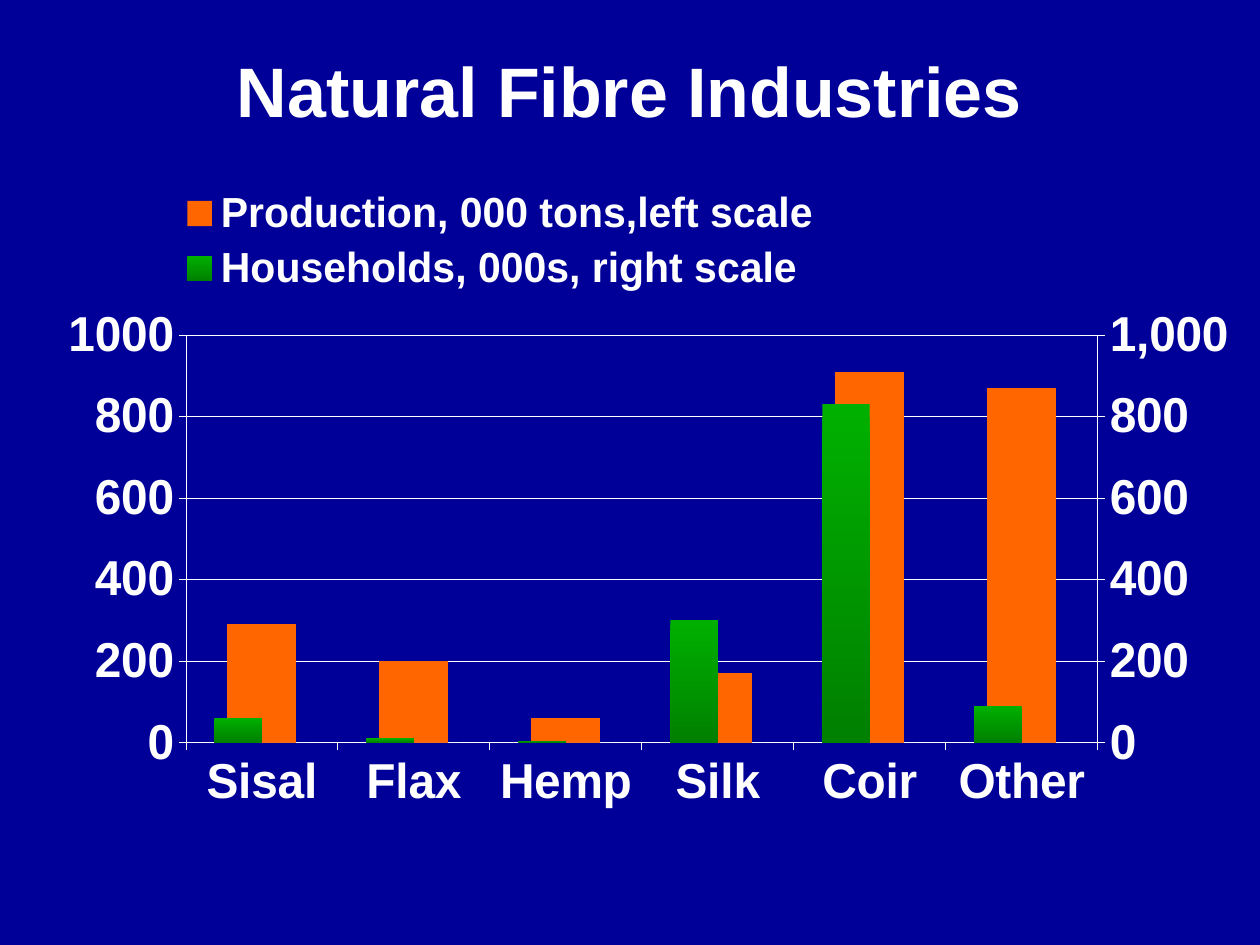
import copy

import pptx
import pptx.chart.data
import pptx.dml.color
import pptx.enum.chart
import pptx.enum.text
import pptx.oxml
import pptx.oxml.ns
import pptx.util

Inches = pptx.util.Inches
qn = pptx.oxml.ns.qn
WHITE = "FFFFFF"
CATEGORIES = ["Sisal", "Flax", "Hemp", "Silk", "Coir", "Other"]
SERIES = {
    "Production, 000 tons,left scale": [290, 200, 60, 170, 910, 870],
    "Households, 000s, right scale": [60, 10, 5, 300, 830, 90],
    "Series 3": [0] * 6,
}


def rgb(value):
    """Return the colour for a hex string."""
    return pptx.dml.color.RGBColor.from_string(value)


def set_font(font, size, bold=True, color=WHITE, name="Arial"):
    """Format a font."""
    font.size, font.bold, font.name = pptx.util.Pt(size), bold, name
    font.color.rgb = rgb(color)


def write_text(tf, text, size=18, align=pptx.enum.text.PP_ALIGN.CENTER, **fmt):
    """Write one formatted paragraph in a text frame."""
    p = tf.paragraphs[0]
    p.alignment = align
    r = p.add_run()
    r.text = text
    set_font(r.font, size, **fmt)


def add_title(s, text):
    """Place and fill the title placeholder."""
    sp = s.shapes.title
    sp.left, sp.top, sp.width, sp.height = map(Inches, (0.33, 0.25, 9.33, 0.92))
    sp.text_frame.vertical_anchor = pptx.enum.text.MSO_ANCHOR.MIDDLE
    write_text(sp.text_frame, text, size=40)


def chart_xml(tag, body):
    """Parse one chart element with the given content."""
    uri = pptx.oxml.ns.nsuri("c")
    return pptx.oxml.parse_xml(f'<c:{tag} xmlns:c="{uri}">{body}</c:{tag}>')


def layout_xml(x, y, w, h, inner=False):
    """Return a manual layout in fractions of the chart."""
    body = '<c:layoutTarget val="inner"/>' if inner else ""
    body += '<c:xMode val="edge"/><c:yMode val="edge"/>'
    body += "".join(f'<c:{k} val="{v}"/>' for k, v in zip("xywh", (x, y, w, h)))
    return chart_xml("layout", f"<c:manualLayout>{body}</c:manualLayout>")


def format_axis(axis):
    """Give an axis white lines, outside ticks and large labels."""
    axis.format.line.color.rgb = rgb(WHITE)
    axis.format.line.width = pptx.util.Pt(0.5)
    axis.major_tick_mark = pptx.enum.chart.XL_TICK_MARK.OUTSIDE
    axis.minor_tick_mark = pptx.enum.chart.XL_TICK_MARK.NONE
    set_font(axis.tick_labels.font, 28)


def format_value_axis(axis):
    """Set the scale, labels and gridlines of the value axis."""
    format_axis(axis)
    axis.minimum_scale, axis.maximum_scale, axis.major_unit = 0, 1000, 200
    axis.has_major_gridlines = True
    axis.major_gridlines.format.line.color.rgb = rgb(WHITE)
    axis.major_gridlines.format.line.width = pptx.util.Pt(0.5)
    axis.tick_labels.number_format = "0"
    axis.tick_labels.number_format_is_linked = False


def format_series(plot):
    """Colour the three series."""
    production, households, third = plot.series
    for ser, color in ((production, "FF6600"), (third, "AAAACA")):
        ser.format.fill.solid()
        ser.format.fill.fore_color.rgb = rgb(color)
    fill = households.format.fill
    fill.gradient()
    fill.gradient_angle = 270
    for stop, color in zip(fill.gradient_stops, ("00B000", "008000")):
        stop.color.rgb = rgb(color)


def add_right_axis(chart):
    """Move all series but the first to a second pair of axes."""
    area = chart.element.find(".//" + qn("c:plotArea"))
    left = area.find(qn("c:barChart"))
    right = copy.deepcopy(left)
    for ser in left.findall(qn("c:ser"))[1:]:
        left.remove(ser)
    right.remove(right.find(qn("c:ser")))
    left.addnext(right)

    cat = copy.deepcopy(area.find(qn("c:catAx")))
    val = copy.deepcopy(area.find(qn("c:valAx")))
    area.find(qn("c:valAx")).addnext(val)
    val.addnext(cat)
    for ref, new_id in zip(right.findall(qn("c:axId")), ("5001", "5002")):
        ref.set("val", new_id)
    for axis, own, other in ((cat, "5001", "5002"), (val, "5002", "5001")):
        axis.find(qn("c:axId")).set("val", own)
        axis.find(qn("c:crossAx")).set("val", other)
    cat.find(qn("c:delete")).set("val", "1")
    val.remove(val.find(qn("c:majorGridlines")))
    val.find(qn("c:axPos")).set("val", "r")
    val.find(qn("c:crosses")).set("val", "max")
    val.find(qn("c:numFmt")).set("formatCode", "#,##0")


def format_legend(chart):
    """Place the legend at the top and hide the third entry."""
    chart.has_legend = True
    legend = chart.legend
    legend.position = pptx.enum.chart.XL_LEGEND_POSITION.TOP
    legend.include_in_layout = False
    set_font(legend.font, 24)
    element = chart.element.find(".//" + qn("c:legend"))
    for old in element.findall(qn("c:layout")):
        element.remove(old)
    entry = chart_xml("legendEntry", '<c:idx val="2"/><c:delete val="1"/>')
    element.find(qn("c:legendPos")).addnext(entry)
    entry.addnext(layout_xml(0.11, 0.02, 0.56, 0.16))


def add_fibre_chart(s):
    """Add the column chart with a left and a right scale."""
    data = pptx.chart.data.CategoryChartData()
    data.categories = CATEGORIES
    for name, values in SERIES.items():
        data.add_series(name, values)
    kind = pptx.enum.chart.XL_CHART_TYPE.COLUMN_CLUSTERED
    box = map(Inches, (0.42, 1.33, 9.33, 5.83))
    chart = s.shapes.add_chart(kind, *box, data).chart
    set_font(chart.font, 18, bold=False)
    chart.has_title = False
    plot = chart.plots[0]
    plot.gap_width, plot.overlap, plot.vary_by_categories = 120, 0, False
    format_series(plot)
    format_axis(chart.category_axis)
    format_value_axis(chart.value_axis)
    add_right_axis(chart)
    format_legend(chart)
    area = chart.element.find(".//" + qn("c:plotArea"))
    for old in area.findall(qn("c:layout")):
        area.remove(old)
    area.insert(0, layout_xml(0.116, 0.228, 0.795, 0.555, inner=True))


def main():
    """Build the slide and save it."""
    prs = pptx.Presentation()
    prs.slide_width, prs.slide_height = Inches(10), Inches(7.5)
    s = prs.slides.add_slide(prs.slide_layouts[5])
    s.background.fill.solid()
    s.background.fill.fore_color.rgb = rgb("000099")
    add_title(s, "Natural Fibre Industries")
    add_fibre_chart(s)
    prs.save("out.pptx")


if __name__ == "__main__":
    main()
